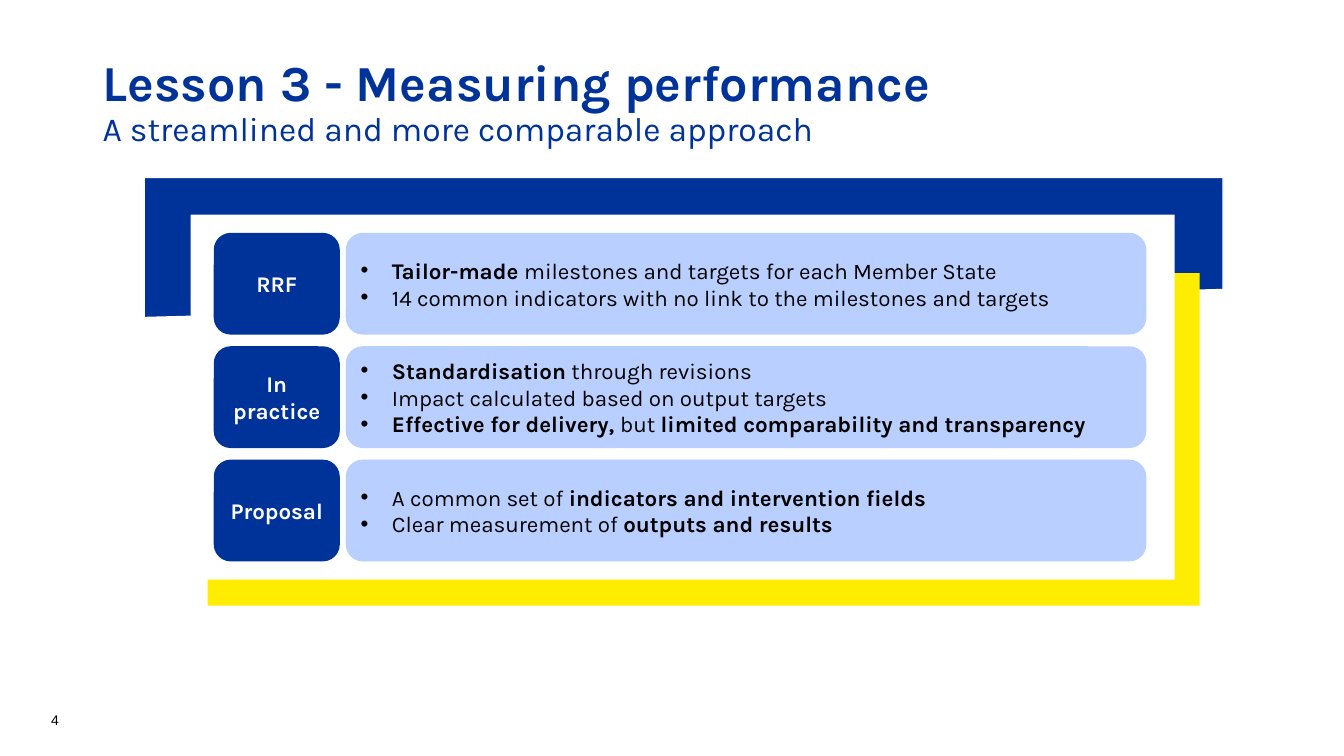
from lxml.etree import SubElement
from pptx import Presentation
from pptx.dml.color import RGBColor
from pptx.enum.shapes import MSO_SHAPE
from pptx.enum.text import MSO_ANCHOR, PP_ALIGN
from pptx.oxml.ns import qn
from pptx.util import Inches, Pt

# Content: each line is a list of (text, bold) spans
TITLE = "Lesson 3 - Measuring performance"
SUBTITLE = "A streamlined and more comparable approach"
PAGE_NUMBER = "4"
ROWS = [
    ("RRF", [
        [("Tailor-made ", True), ("milestones and targets for each Member State", False)],
        [("14 common indicators with no link to the milestones and targets", False)],
    ]),
    ("In practice", [
        [("Standardisation", True), (" through revisions", False)],
        [("Impact calculated based on output targets", False)],
        [("Effective for delivery, ", True), ("but ", False),
         ("limited comparability and transparency", True)],
    ]),
    ("Proposal", [
        [("A common set of ", False), ("indicators and intervention fields", True)],
        [("Clear measurement of ", False), ("outputs and results", True)],
    ]),
]

BLUE = RGBColor(0x00, 0x33, 0x99)
PALE_BLUE = RGBColor(0xB8, 0xCF, 0xFF)
YELLOW = RGBColor(0xFF, 0xED, 0x00)
WHITE = RGBColor(0xFF, 0xFF, 0xFF)
BLACK = RGBColor(0x00, 0x00, 0x00)

# Row grid, in inches
ROW_TOP, ROW_STEP, ROW_HEIGHT = 2.31, 1.125, 1.01
LABEL_LEFT, LABEL_WIDTH = 2.12, 1.25
PANEL_LEFT, PANEL_WIDTH = 3.43, 7.94
BULLET_INDENT = 0.31


def add_block(page, kind, left, top, width, height, fill):
    block = page.shapes.add_shape(
        kind, Inches(left), Inches(top), Inches(width), Inches(height))
    block.shadow.inherit = False
    block.fill.solid()
    block.fill.fore_color.rgb = fill
    block.line.fill.background()
    return block


def add_bullet(para):
    properties = para._p.get_or_add_pPr()
    properties.set("marL", str(Inches(BULLET_INDENT)))
    properties.set("indent", str(-Inches(BULLET_INDENT)))
    SubElement(properties, qn("a:buFont"), typeface="Arial")
    SubElement(properties, qn("a:buChar"), char="•")


def write_text(box, lines, size=16, color=BLACK, font="Karla",
               align=PP_ALIGN.LEFT, anchor=MSO_ANCHOR.MIDDLE, bullets=False):
    frame = box.text_frame
    frame.word_wrap = True
    frame.vertical_anchor = anchor
    for index, spans in enumerate(lines):
        para = frame.paragraphs[0] if index == 0 else frame.add_paragraph()
        para.alignment = align
        if bullets:
            add_bullet(para)
        for text, bold in spans:
            span = para.add_run()
            span.text = text
            span.font.name = font
            span.font.size = Pt(size)
            span.font.bold = bold
            span.font.color.rgb = color
    return frame


def main():
    deck = Presentation()
    deck.slide_width, deck.slide_height = Inches(13.33), Inches(7.5)
    page = deck.slides.add_slide(deck.slide_layouts[6])

    # Title and subtitle share one paragraph
    heading = page.shapes.add_textbox(Inches(0.92), Inches(0.58), Inches(11.9), Inches(0.89))
    frame = write_text(heading, [[(TITLE, True)]], size=36, color=BLUE)
    para = frame.paragraphs[0]
    para.line_spacing = 0.9
    para.add_line_break()
    span = para.add_run()
    span.text = SUBTITLE
    span.font.name = "Karla"
    span.font.size = Pt(24)
    span.font.color.rgb = BLUE

    # Page number
    number = page.shapes.add_textbox(Inches(0.41), Inches(6.87), Inches(3), Inches(0.4))
    write_text(number, [[(PAGE_NUMBER, False)]], size=10, font="Arial",
               anchor=MSO_ANCHOR.BOTTOM)

    # Frame: blue corner band, yellow corner band, white centre
    band = add_block(page, MSO_SHAPE.FLOWCHART_MANUAL_INPUT, 1.43, 1.76, 10.7, 1.39, BLUE)
    band.rotation = 180
    band.line.color.rgb = WHITE
    band.line.width = Pt(1)
    add_block(page, MSO_SHAPE.RECTANGLE, 2.06, 2.71, 9.84, 3.3, YELLOW)
    add_block(page, MSO_SHAPE.RECTANGLE, 1.89, 2.13, 9.76, 3.62, WHITE)

    # Label and panel for each row
    for index, (label, lines) in enumerate(ROWS):
        top = ROW_TOP + index * ROW_STEP
        panel = add_block(page, MSO_SHAPE.ROUNDED_RECTANGLE, PANEL_LEFT, top,
                          PANEL_WIDTH, ROW_HEIGHT, PALE_BLUE)
        write_text(panel, lines, bullets=True)
        tag = add_block(page, MSO_SHAPE.ROUNDED_RECTANGLE, LABEL_LEFT, top,
                        LABEL_WIDTH, ROW_HEIGHT, BLUE)
        write_text(tag, [[(label, True)]], color=WHITE, align=PP_ALIGN.CENTER)

    deck.save("out.pptx")


if __name__ == "__main__":
    main()
